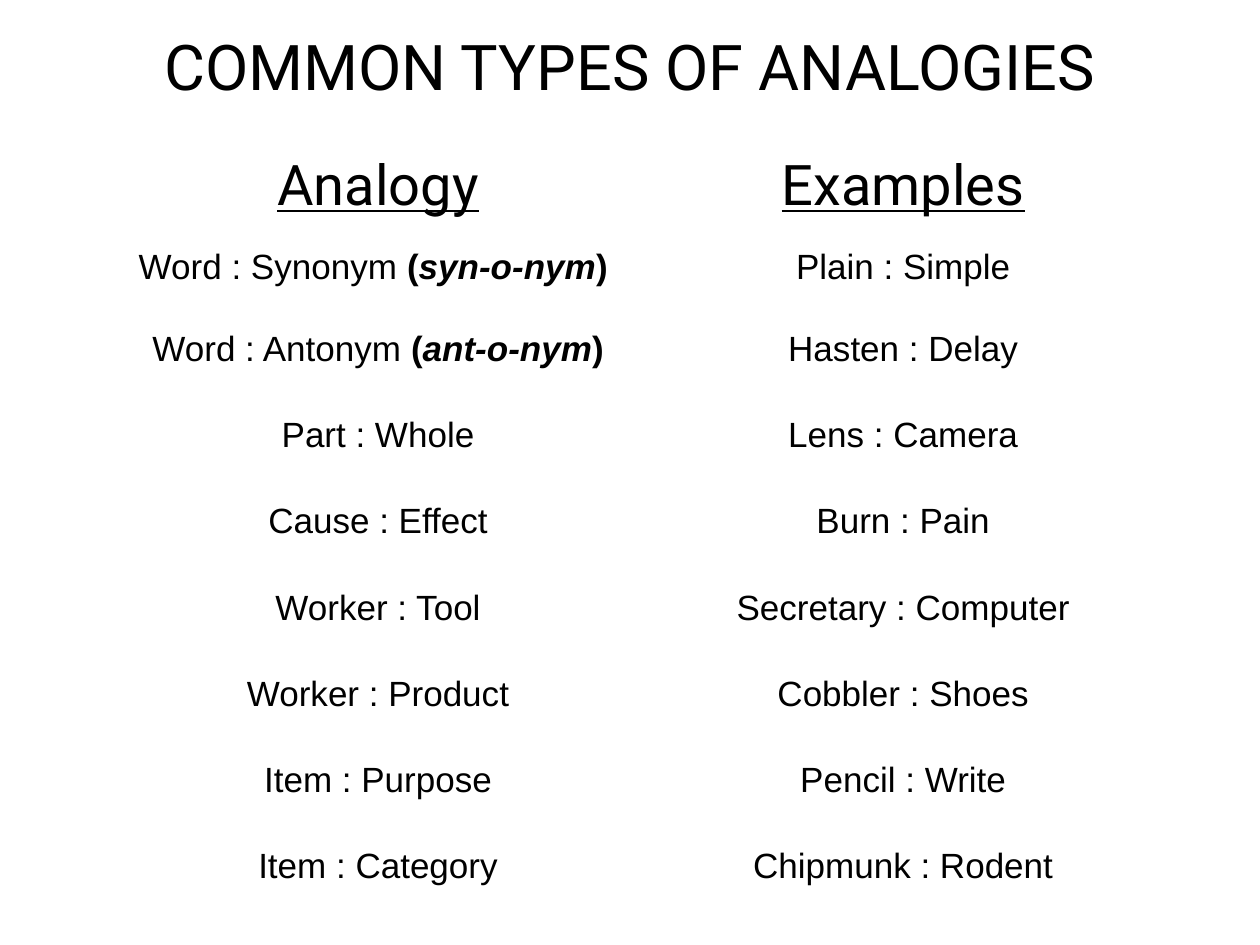
from pptx import Presentation
from pptx.dml.color import RGBColor
from pptx.enum.text import PP_ALIGN
from pptx.util import Cm, Pt

BLACK = RGBColor(0, 0, 0)
INSET = Cm(0.13)
HEADS = ("Analogy", "Examples")
PAIRS = [
    (("Word : Synonym ", "(", "syn-o-nym", ") "), "Plain : Simple"),
    (("Word : Antonym ", "(", "ant-o-nym", ")"), "Hasten : Delay"),
    ("Part : Whole", "Lens : Camera"),
    ("Cause : Effect", "Burn : Pain"),
    ("Worker : Tool", "Secretary : Computer"),
    ("Worker : Product", "Cobbler : Shoes"),
    ("Item : Purpose", "Pencil : Write"),
    ("Item : Category", "Chipmunk : Rodent"),
]


def write(para, text, size=20, face="Arial", bold=False, slant=False, line=False):
    """Add a centred run of text in the given format."""
    para.alignment = PP_ALIGN.CENTER
    run = para.add_run()
    run.text = text
    font = run.font
    font.size, font.name = Pt(size), face
    font.bold, font.italic, font.underline = bold, slant, line
    font.color.rgb = BLACK


def inset(box):
    """Give a cell or text frame equal narrow margins."""
    box.margin_left = box.margin_right = INSET
    box.margin_top = box.margin_bottom = INSET


def title(slide, left, top, width, height):
    """Place the slide title in its box."""
    frame = slide.shapes.add_textbox(left, top, width, height).text_frame
    frame.word_wrap = True
    inset(frame)
    write(frame.paragraphs[0], "COMMON TYPES OF ANALOGIES", size=36, face="Roboto")


def fill(cell, text, head):
    """Write one cell, stressing the spoken form when there is one."""
    cell.fill.background()
    inset(cell)
    para = cell.text_frame.paragraphs[0]
    if head:
        write(para, text, size=32, face="Roboto", line=True)
    elif isinstance(text, str):
        write(para, text)
    else:
        for spot, part in enumerate(text):
            write(para, part, bold=spot > 0, slant=spot == 2)


def chart(slide, left, top, width, height):
    """Place the table of analogies and examples in its box."""
    rows = [HEADS] + PAIRS
    table = slide.shapes.add_table(len(rows), 2, left, top, width, height).table
    table.first_row = table.horz_banding = False
    tall = [Cm(1.9), Cm(1.65)]
    rest = (height - sum(tall)) // (len(rows) - len(tall))
    tall += [rest] * (len(rows) - len(tall))
    for row, pair in enumerate(rows):
        table.rows[row].height = tall[row]
        for col, text in enumerate(pair):
            fill(table.cell(row, col), text, head=row == 0)


def main():
    """Build and save the slide."""
    deck = Presentation()
    deck.slide_width, deck.slide_height = Cm(25.4), Cm(19.05)
    slide = deck.slides.add_slide(deck.slide_layouts[6])
    title(slide, Cm(1.7), Cm(0.43), Cm(22), Cm(2.31))
    chart(slide, Cm(2.33), Cm(2.96), Cm(21.17), Cm(15.73))
    deck.save("out.pptx")


if __name__ == "__main__":
    main()
